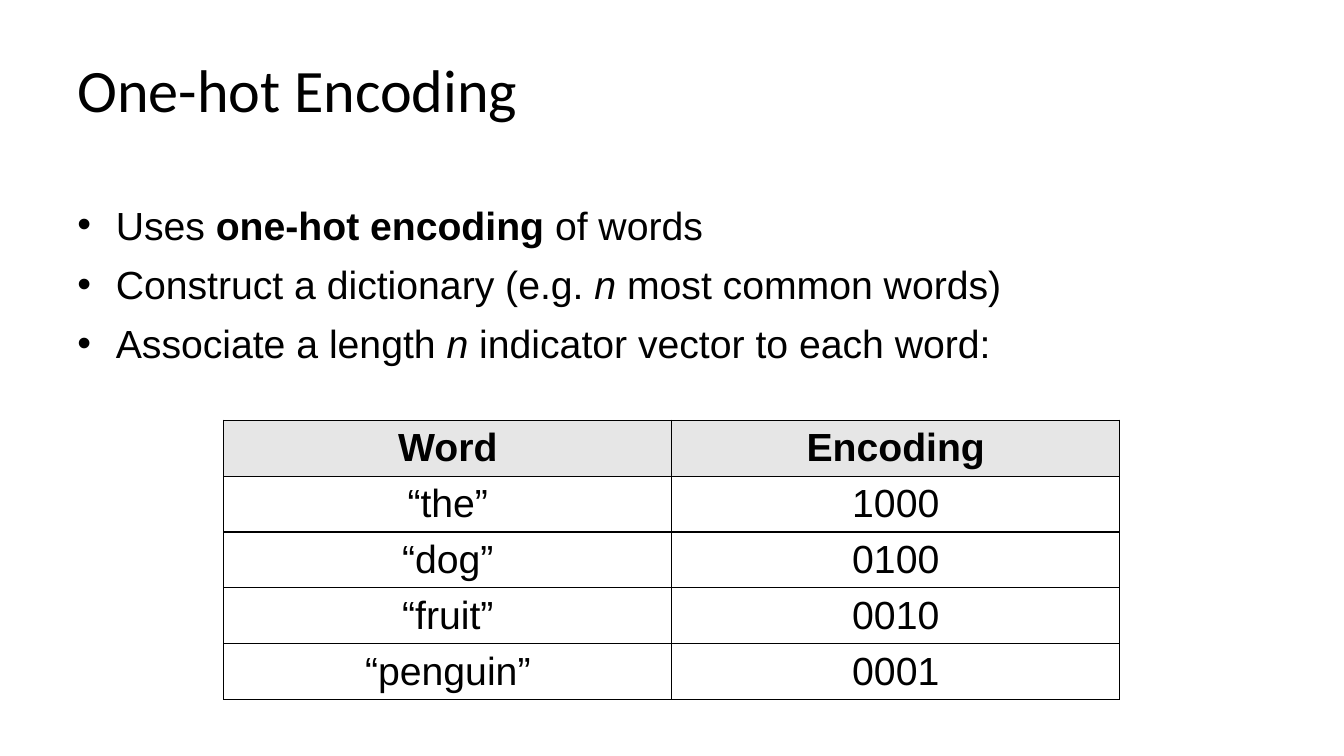
"""Build the one-hot encoding slide."""
from lxml.etree import SubElement
from pptx import Presentation
from pptx.dml.color import RGBColor
from pptx.enum.text import MSO_ANCHOR as Anchor, MSO_AUTO_SIZE as AutoSize, PP_ALIGN as Align
from pptx.oxml.ns import qn
from pptx.util import Cm, Pt

TITLE = "One-hot Encoding"
BULLETS = [
    [("Uses ", ""), ("one-hot encoding", "bold"), (" of words", "")],
    [("Construct a dictionary (e.g. ", ""), ("n", "italic"), (" most common words)", "")],
    [("Associate a length ", ""), ("n", "italic"), (" indicator vector to each word:", "")],
]
ENCODINGS = [
    ("Word", "Encoding"),
    ("“the”", "1000"),
    ("“dog”", "0100"),
    ("“fruit”", "0010"),
    ("“penguin”", "0001"),
]

BLACK = RGBColor(0x00, 0x00, 0x00)
WHITE = RGBColor(0xFF, 0xFF, 0xFF)
HEADER_GRAY = RGBColor(0xE6, 0xE6, 0xE6)
LEFT = Cm(1.7)
INDENT = Cm(0.97)
COLUMN_WIDTH = Cm(11.29)
ROW_HEIGHT = Cm(1.36)
CELL_MARGIN = Cm(0.11)


def set_font(font, name, size):
    font.name = name
    font.size = Pt(size)
    font.color.rgb = BLACK


def add_title(slide):
    title = slide.shapes.title
    title.left, title.top, title.width, title.height = LEFT, Cm(0.64), Cm(31.55), Cm(3.18)
    frame = title.text_frame
    frame.text = TITLE
    frame.auto_size = AutoSize.NONE
    frame.vertical_anchor = Anchor.MIDDLE
    paragraph = frame.paragraphs[0]
    paragraph.alignment = Align.LEFT
    set_font(paragraph.font, "Calibri", 43)


def add_bullets(slide):
    frame = slide.shapes.add_textbox(LEFT, Cm(4.88), Cm(32.16), Cm(12.5)).text_frame
    frame.word_wrap = True
    for index, runs in enumerate(BULLETS):
        paragraph = frame.paragraphs[0] if index == 0 else frame.add_paragraph()
        paragraph.line_spacing = 1.05
        paragraph.space_before = Pt(6.9 if index else 0)
        properties = paragraph._p.get_or_add_pPr()
        properties.set("marL", str(INDENT))
        properties.set("indent", str(-INDENT))
        SubElement(properties, qn("a:buFont"), typeface="Arial")
        SubElement(properties, qn("a:buChar"), char="•")
        set_font(paragraph.font, "Arial", 28)
        for text, style in runs:
            run = paragraph.add_run()
            run.text = text
            if style:
                setattr(run.font, style, True)


def add_borders(cell):
    properties = cell._tc.get_or_add_tcPr()
    for position, side in enumerate(("a:lnL", "a:lnR", "a:lnT", "a:lnB")):
        line = properties.makeelement(qn(side), {"w": str(Pt(1))})
        fill = SubElement(line, qn("a:solidFill"))
        SubElement(fill, qn("a:srgbClr"), val=str(BLACK))
        properties.insert(position, line)


def add_encoding_table(slide):
    rows, columns = len(ENCODINGS), len(ENCODINGS[0])
    table = slide.shapes.add_table(
        rows, columns, Cm(5.64), Cm(10.59), COLUMN_WIDTH * columns, ROW_HEIGHT * rows
    ).table
    for row_index, values in enumerate(ENCODINGS):
        for column_index, value in enumerate(values):
            cell = table.cell(row_index, column_index)
            cell.text = value
            cell.vertical_anchor = Anchor.MIDDLE
            cell.margin_top = cell.margin_bottom = CELL_MARGIN
            cell.fill.solid()
            cell.fill.fore_color.rgb = WHITE if row_index else HEADER_GRAY
            paragraph = cell.text_frame.paragraphs[0]
            paragraph.alignment = Align.CENTER
            set_font(paragraph.font, "Arial", 28)
            paragraph.font.bold = row_index == 0
            add_borders(cell)


def main():
    presentation = Presentation()
    presentation.slide_width, presentation.slide_height = Cm(33.87), Cm(19.05)
    slide = presentation.slides.add_slide(presentation.slide_layouts[5])
    add_title(slide)
    add_bullets(slide)
    add_encoding_table(slide)
    presentation.save("out.pptx")


if __name__ == "__main__":
    main()
